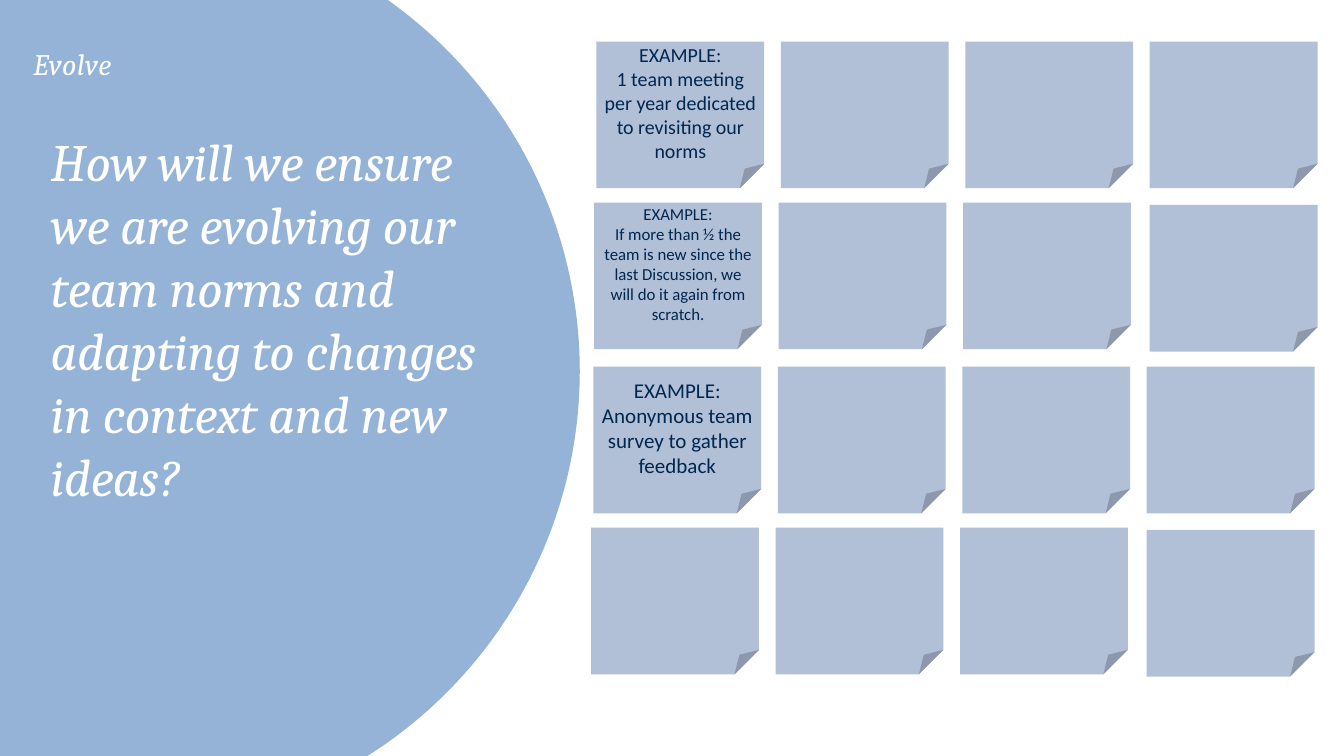
from dataclasses import dataclass

from pptx import Presentation
from pptx.dml.color import RGBColor
from pptx.enum.shapes import MSO_SHAPE as Shape
from pptx.enum.text import MSO_ANCHOR as Anchor, MSO_AUTO_SIZE as AutoSize, PP_ALIGN as Align
from pptx.util import Inches, Pt


@dataclass(frozen=True)
class Theme:
    circle: RGBColor = RGBColor(0x95, 0xB3, 0xD7)
    note: RGBColor = RGBColor(0xB1, 0xBF, 0xD7)
    ink: RGBColor = RGBColor(0x00, 0x27, 0x4E)
    light: RGBColor = RGBColor(0xFF, 0xFF, 0xFF)
    heading_font: str = "Cambria"
    note_font: str = "Calibri"
    section_size: float = 28.4
    question_size: float = 50


THEME = Theme()

SECTION = "Evolve"
QUESTION = ("How will we ensure we are evolving our team norms and "
            "adapting to changes in context and new ideas?")

COLUMNS = 4
COLUMN_PITCH = 2.44
NOTE_SIZE = (2.22, 1.94)
# Left and top of each row, shift of its last note, text size and text of its first note
NOTE_ROWS = [
    (7.89, 0.55, 0, 19, ["EXAMPLE:", "1 team meeting per year dedicated to revisiting our norms"]),
    (7.86, 2.68, 0.03, 16, ["EXAMPLE:", "If more than ½ the team is new since the last Discussion, "
                            "we will do it again from scratch."]),
    (7.85, 4.85, 0, 20, ["EXAMPLE: Anonymous team survey to gather feedback"]),
    (7.82, 6.98, 0.03, 20, []),
]


def set_all(target, values):
    for name, value in values.items():
        setattr(target, name, value)


def place(shape, box):
    set_all(shape, dict(zip(("left", "top", "width", "height"), map(Inches, box))))


def add_filled(slide, kind, box, color):
    shape = slide.shapes.add_shape(kind, *map(Inches, box))
    shape.shadow.inherit = False
    shape.fill.solid()
    shape.fill.fore_color.rgb = color
    shape.line.fill.background()
    return shape


def write_heading(shape, text, size, inset_top, tracking, paragraph_format):
    """Write light italic serif text; tracking is in hundredths of a point."""
    frame = shape.text_frame
    set_all(frame, {
        "word_wrap": True, "auto_size": AutoSize.NONE, "vertical_anchor": Anchor.TOP,
        "margin_left": 0, "margin_right": 0, "margin_bottom": 0,
        "margin_top": Inches(inset_top),
    })
    paragraph = frame.paragraphs[0]
    set_all(paragraph, {"alignment": Align.LEFT, **paragraph_format})
    run = paragraph.add_run()
    run.text = text
    set_all(run.font, {"name": THEME.heading_font, "size": Pt(size), "italic": True})
    run.font.color.rgb = THEME.light
    run._r.get_or_add_rPr().set("spc", str(tracking))


def add_question_panel(slide, box):
    left, top, width, height = box
    add_filled(slide, Shape.FLOWCHART_CONNECTOR, box, THEME.circle)

    section = slide.shapes.add_textbox(
        *map(Inches, (left + 4.88, top + 1.46, 2.61, 0.7)))
    write_heading(section, SECTION, THEME.section_size, 0.09, 50,
                  {"line_spacing": Pt(46.6), "space_before": Pt(6.8)})

    question = slide.shapes.title
    place(question, (left + 5.11, top + 2.81, width - 5.98, height - 7))
    write_heading(question, QUESTION, THEME.question_size, 0.02, -30,
                  {"space_before": Pt(1.1), "space_after": Pt(13.3)})
    # The title is created first, so lift it above the circle
    slide.shapes._spTree.append(question._element)


def add_note(slide, box, size, lines):
    note = add_filled(slide, Shape.FOLDED_CORNER, box, THEME.note)
    frame = note.text_frame
    set_all(frame, {"word_wrap": True, "vertical_anchor": Anchor.MIDDLE})
    for index, line in enumerate(lines):
        paragraph = frame.add_paragraph() if index else frame.paragraphs[0]
        paragraph.alignment = Align.CENTER
        run = paragraph.add_run()
        run.text = line
        set_all(run.font, {"name": THEME.note_font, "size": Pt(size)})
        run.font.color.rgb = THEME.ink


def add_note_row(slide, left, top, last_shift, size, example):
    for column in range(COLUMNS):
        shift = last_shift if column == COLUMNS - 1 else 0
        box = (left + column * COLUMN_PITCH + shift, top + shift, *NOTE_SIZE)
        add_note(slide, box, size, [] if column else example)


def main():
    deck = Presentation()
    set_all(deck, {"slide_width": Inches(17.78), "slide_height": Inches(10)})
    slide = deck.slides.add_slide(deck.slide_layouts.get_by_name("Title Only"))
    add_question_panel(slide, (-4.44, -1.12, 12.11, 12.06))
    for row in NOTE_ROWS:
        add_note_row(slide, *row)
    deck.save("out.pptx")


if __name__ == "__main__":
    main()
